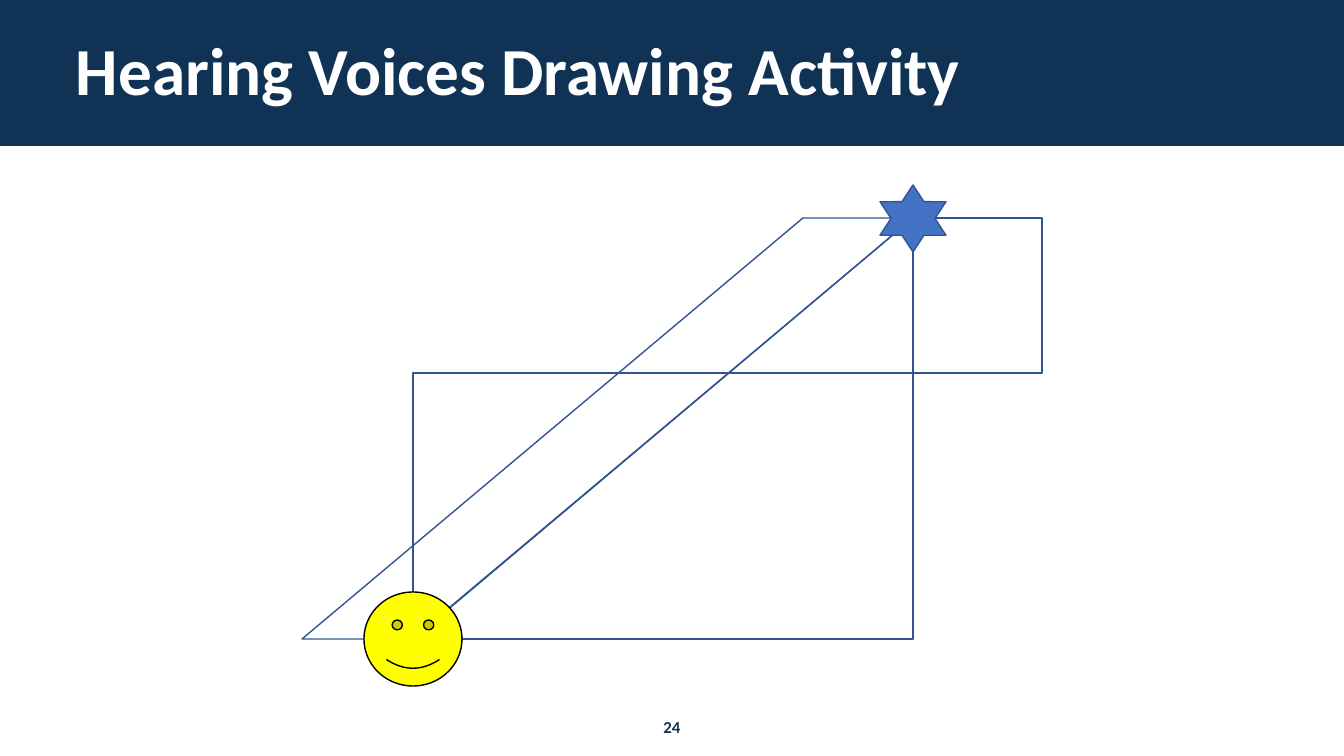
from pptx import Presentation
from pptx.util import Emu, Pt
from pptx.dml.color import RGBColor
from pptx.enum.shapes import MSO_SHAPE as SHAPE
from pptx.enum.text import MSO_ANCHOR as ANCHOR, PP_ALIGN as ALIGN

TITLE = "Hearing Voices Drawing Activity"
PAGE = "24"
FONT = "Calibri"
COLORS = {
    "navy": "103255", "white": "FFFFFF", "outline": "325491",
    "blue": "4472C4", "yellow": "FFFF00", "black": "000000",
}

SLIDE_W, SLIDE_H = 1344, 756
BANNER_H = 146
LEFT, RIGHT, TOP, BOTTOM = 413, 913, 218, 639
SLANT_LEFT, FAR_RIGHT, MIDDLE = 302, 1042, 373
SLANT = 1.19
FACE_W, FACE_H = 98, 94
STAR_W, STAR_H = 66, 67


def between(x1, y1, x2, y2):
    return x1, y1, x2 - x1, y2 - y1


def centred(x, y, w, h):
    return x - w // 2, y - h // 2, w, h


DRAWING = [
    (SHAPE.PARALLELOGRAM, between(SLANT_LEFT, TOP, RIGHT, BOTTOM), {"adj": SLANT}),
    (SHAPE.RIGHT_TRIANGLE, between(LEFT, TOP, RIGHT, BOTTOM), {"flip": True}),
    (SHAPE.RECTANGLE, between(LEFT, MIDDLE, RIGHT, BOTTOM), {}),
    (SHAPE.SMILEY_FACE, centred(LEFT, BOTTOM, FACE_W, FACE_H),
     {"fill": "yellow", "line": "black"}),
    (SHAPE.RECTANGLE, between(RIGHT, TOP, FAR_RIGHT, MIDDLE), {}),
    (SHAPE.STAR_6_POINT, centred(RIGHT, TOP, STAR_W, STAR_H), {"fill": "blue"}),
]


def px(n):
    return Emu(round(n * 914400 / 100.8))


def rgb(name):
    return RGBColor.from_string(COLORS[name])


def add_figure(slide, kind, box, fill=None, line="outline", adj=None, flip=False):
    sp = slide.shapes.add_shape(kind, *map(px, box))
    sp.shadow.inherit = False
    if fill:
        sp.fill.solid()
        sp.fill.fore_color.rgb = rgb(fill)
    else:
        sp.fill.background()
    if line:
        sp.line.color.rgb = rgb(line)
        sp.line.width = Pt(1)
    else:
        sp.line.fill.background()
    if adj is not None:
        sp.adjustments[0] = adj
    if flip:
        sp._element.spPr.get_or_add_xfrm().set("flipH", "1")


def add_text(slide, text, box, size, color, align=ALIGN.LEFT,
             anchor=ANCHOR.TOP, spacing=1.0):
    tf = slide.shapes.add_textbox(*map(px, box)).text_frame
    tf.word_wrap = True
    tf.vertical_anchor = anchor
    p = tf.paragraphs[0]
    p.alignment = align
    p.line_spacing = spacing
    r = p.add_run()
    r.text = text
    r.font.name = FONT
    r.font.size = Pt(size)
    r.font.bold = True
    r.font.color.rgb = rgb(color)


def main():
    prs = Presentation()
    prs.slide_width, prs.slide_height = px(SLIDE_W), px(SLIDE_H)
    slide = prs.slides.add_slide(prs.slide_layouts[6])
    add_figure(slide, SHAPE.RECTANGLE, (0, 0, SLIDE_W, BANNER_H),
               fill="navy", line=None)
    add_text(slide, PAGE, (614, 712, 116, 30), 12, "navy", align=ALIGN.CENTER)
    add_text(slide, TITLE, (66, 40, 1214, 68), 48, "white",
             anchor=ANCHOR.MIDDLE, spacing=0.9)
    for kind, box, style in DRAWING:
        add_figure(slide, kind, box, **style)
    prs.save("out.pptx")


if __name__ == "__main__":
    main()
